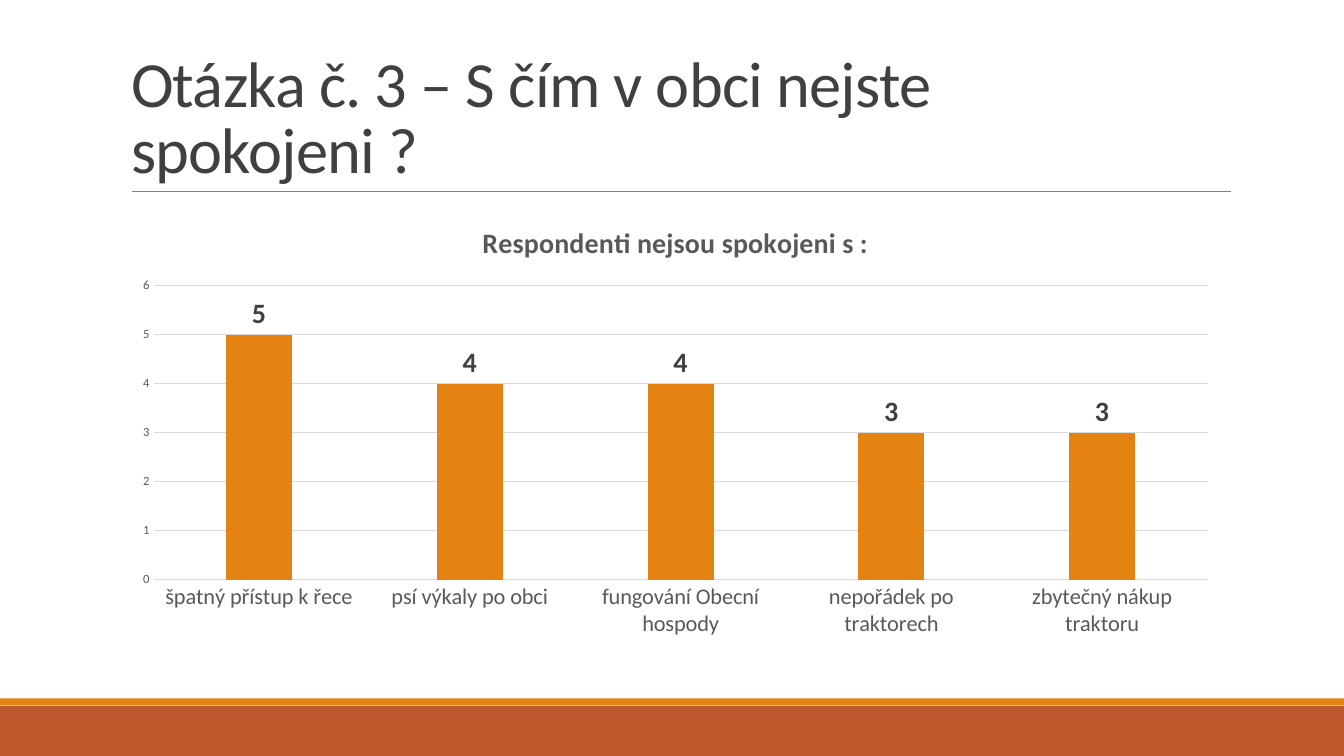
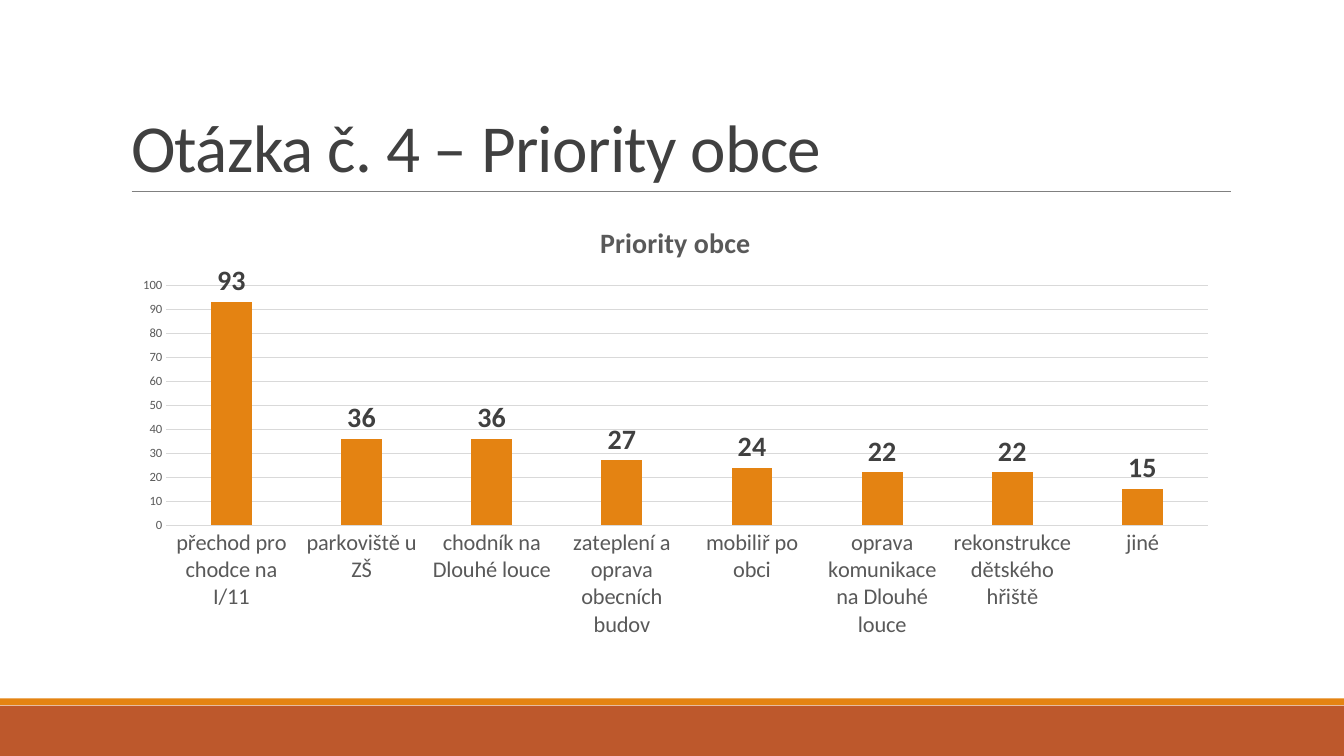
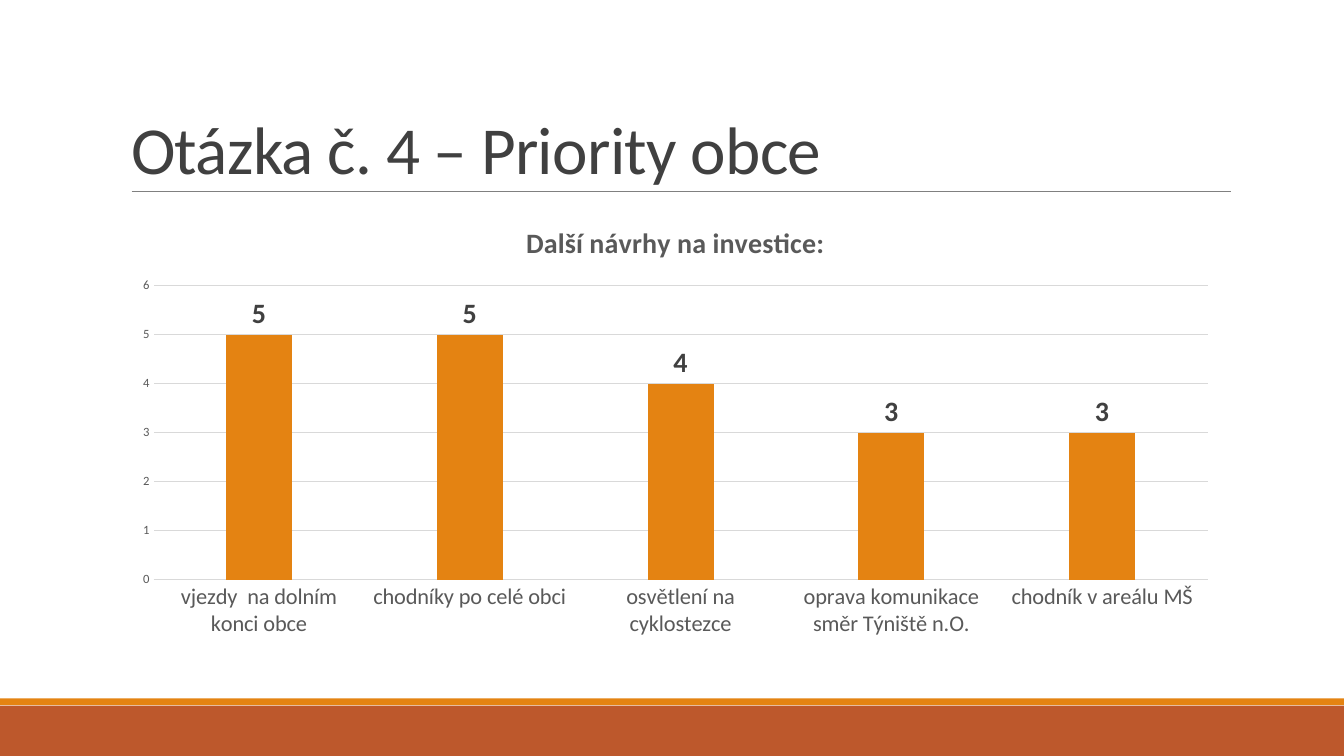
from pptx import Presentation
from pptx.chart.data import CategoryChartData
from pptx.dml.color import RGBColor
from pptx.enum.chart import XL_CHART_TYPE, XL_LABEL_POSITION, XL_TICK_MARK
from pptx.enum.shapes import MSO_CONNECTOR, MSO_SHAPE, PP_PLACEHOLDER
from pptx.enum.text import MSO_ANCHOR, MSO_AUTO_SIZE, PP_ALIGN
from pptx.oxml.ns import qn
from pptx.util import Cm, Pt
from lxml.etree import SubElement

# Shared look
FONT = "Calibri"
RUST = RGBColor(0xBD, 0x58, 0x2C)
ORANGE = RGBColor(0xE4, 0x83, 0x12)
RULE_GREY = RGBColor(0x80, 0x80, 0x80)
GRID_GREY = RGBColor(0xD9, 0xD9, 0xD9)
TITLE_GREY = RGBColor(0x40, 0x40, 0x40)
TEXT_GREY = RGBColor(0x59, 0x59, 0x59)
PAGE_WIDTH, PAGE_HEIGHT = Cm(33.87), Cm(19.05)
LEFT, CONTENT_WIDTH = Cm(3.05), Cm(27.94)
TITLE_TOP, TITLE_HEIGHT = Cm(0.79), Cm(4.04)
CHART_TOP, CHART_HEIGHT = Cm(5.13), Cm(11.18)

# Content of each slide
SLIDES = [
    {
        "title": "Otázka č. 3 – S čím v obci nejste spokojeni ?",
        "title_size": 46,
        "chart_title": "Respondenti nejsou spokojeni s :",
        "values": {
            "špatný přístup k řece": 5,
            "psí výkaly po obci": 4,
            "fungování Obecní hospody": 4,
            "nepořádek po traktorech": 3,
            "zbytečný nákup traktoru": 3,
        },
    },
    {
        "title": "Otázka č. 4 – Priority obce",
        "chart_title": "Priority obce",
        "values": {
            "přechod pro chodce na I/11": 93,
            "parkoviště u ZŠ": 36,
            "chodník na Dlouhé louce": 36,
            "zateplení a oprava obecních budov": 27,
            "mobiliř po obci": 24,
            "oprava komunikace na Dlouhé louce": 22,
            "rekonstrukce dětského hřiště": 22,
            "jiné": 15,
        },
    },
    {
        "title": "Otázka č. 4 – Priority obce",
        "title_top": Cm(0.84),
        "chart_title": "Další návrhy na investice:",
        "values": {
            "vjezdy  na dolním konci obce": 5,
            "chodníky po celé obci": 5,
            "osvětlení na cyklostezce": 4,
            "oprava komunikace směr Týniště n.O.": 3,
            "chodník v areálu MŠ": 3,
        },
    },
]


def set_values(target, values):
    for name, value in values.items():
        setattr(target, name, value)


def set_font(font, size, color, bold=False):
    set_values(font, {"name": FONT, "size": Pt(size), "bold": bold})
    font.color.rgb = color


def add_band(page, top, height, color):
    band = page.shapes.add_shape(MSO_SHAPE.RECTANGLE, 0, top, PAGE_WIDTH, height)
    band.shadow.inherit = False
    band.fill.solid()
    band.fill.fore_color.rgb = color
    band.line.fill.background()
    return band


def add_rule(page):
    rule = page.shapes.add_connector(
        MSO_CONNECTOR.STRAIGHT, Cm(3.32), Cm(4.83), Cm(31.01), Cm(4.83))
    rule.line.color.rgb = RULE_GREY
    rule.line.width = Pt(0.5)
    SubElement(rule.element.spPr, qn("a:effectLst"))
    return rule


def prepare_layout(layout):
    """Keep only the title placeholder and give it the common place."""
    for holder in list(layout.placeholders):
        if holder.placeholder_format.type == PP_PLACEHOLDER.TITLE:
            set_values(holder, {"left": LEFT, "top": TITLE_TOP,
                                "width": CONTENT_WIDTH, "height": TITLE_HEIGHT})
        else:
            holder.element.getparent().remove(holder.element)


def share_frame(page):
    """Draw the bands and the title rule, then move them to the layout."""
    frame = [
        add_band(page, Cm(17.78), Cm(1.27), RUST),
        add_band(page, Cm(17.6), Cm(0.17), ORANGE),
        add_rule(page),
    ]
    layout_tree = page.slide_layout.shapes.element
    for position, shape in enumerate(frame, start=2):
        layout_tree.insert(position, shape.element)


def fill_title(page, text, size, top):
    title = page.shapes.title
    set_values(title, {"left": LEFT, "top": top,
                       "width": CONTENT_WIDTH, "height": TITLE_HEIGHT})
    set_values(title.text_frame, {"word_wrap": True,
                                  "auto_size": MSO_AUTO_SIZE.NONE,
                                  "vertical_anchor": MSO_ANCHOR.BOTTOM})
    para = title.text_frame.paragraphs[0]
    set_values(para, {"alignment": PP_ALIGN.LEFT, "line_spacing": 0.85})
    span = para.add_run()
    span.text = text
    set_font(span.font, size, TITLE_GREY)
    span.font._element.set("spc", "-50")


def format_axes(chart):
    categories, scale = chart.category_axis, chart.value_axis
    for axis, size in ((categories, 16), (scale, 9)):
        set_values(axis, {"major_tick_mark": XL_TICK_MARK.NONE,
                          "minor_tick_mark": XL_TICK_MARK.NONE})
        set_font(axis.tick_labels.font, size, TEXT_GREY)
    scale.minimum_scale = 0
    scale.has_major_gridlines = True
    scale.format.line.fill.background()
    for line in (categories.format.line, scale.major_gridlines.format.line):
        line.color.rgb = GRID_GREY
        line.width = Pt(0.75)


def add_column_chart(page, heading, values):
    data = CategoryChartData()
    data.categories = list(values)
    data.add_series("Series 1", list(values.values()))
    chart = page.shapes.add_chart(
        XL_CHART_TYPE.COLUMN_CLUSTERED,
        LEFT, CHART_TOP, CONTENT_WIDTH, CHART_HEIGHT, data).chart
    set_values(chart, {"has_legend": False, "has_title": True})
    set_values(chart.font, {"name": FONT, "size": Pt(10)})

    # Heading
    span = chart.chart_title.text_frame.paragraphs[0].add_run()
    span.text = heading
    set_font(span.font, 20, TEXT_GREY, bold=True)
    chart.chart_title.include_in_layout = False

    # Columns and their labels
    plot = chart.plots[0]
    set_values(plot, {"gap_width": 219, "overlap": -27,
                      "vary_by_categories": False, "has_data_labels": True})
    set_values(plot.data_labels, {"show_value": True,
                                  "position": XL_LABEL_POSITION.OUTSIDE_END})
    set_font(plot.data_labels.font, 20, TITLE_GREY, bold=True)
    columns = plot.series[0].format.fill
    columns.solid()
    columns.fore_color.rgb = ORANGE
    format_axes(chart)


def main():
    deck = Presentation()
    set_values(deck, {"slide_width": PAGE_WIDTH, "slide_height": PAGE_HEIGHT})
    layout = deck.slide_layouts.get_by_name("Title Only")
    prepare_layout(layout)
    for number, content in enumerate(SLIDES):
        page = deck.slides.add_slide(layout)
        if number == 0:
            share_frame(page)
        fill_title(page, content["title"], content.get("title_size", 48),
                   content.get("title_top", TITLE_TOP))
        add_column_chart(page, content["chart_title"], content["values"])
    deck.save("out.pptx")


if __name__ == "__main__":
    main()
